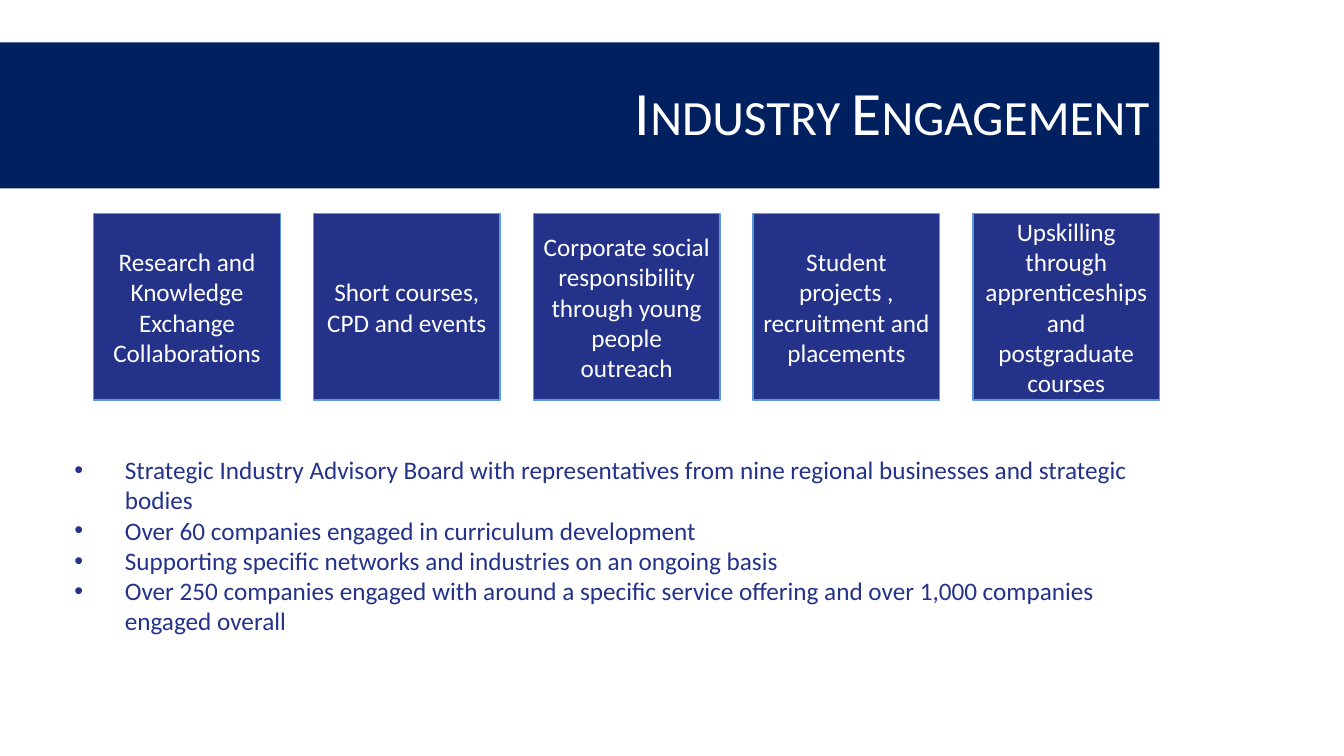
from lxml.etree import SubElement
from pptx import Presentation
from pptx.dml.color import RGBColor
from pptx.enum.shapes import MSO_SHAPE
from pptx.enum.text import MSO_ANCHOR, PP_ALIGN
from pptx.oxml.ns import qn
from pptx.util import Inches, Pt

# Content
TITLE = "Industry Engagement"
ACTIVITIES = [
    "Research and Knowledge Exchange Collaborations",
    "Short courses, CPD and events",
    "Corporate social responsibility through young people outreach",
    "Student projects , recruitment and placements",
    "Upskilling through apprenticeships and postgraduate courses",
]
ACHIEVEMENTS = [
    "Strategic Industry Advisory Board with representatives from nine regional businesses and strategic bodies",
    "Over 60 companies engaged in curriculum development",
    "Supporting specific networks and industries on an ongoing basis",
    "Over 250 companies engaged with around a specific service offering and over 1,000 companies engaged overall",
]

# Theme
THEME = {
    "banner": RGBColor(0x00, 0x20, 0x60),
    "tile": RGBColor(0x24, 0x32, 0x89),
    "outline": RGBColor(0x5B, 0x9B, 0xD5),
    "light": RGBColor(0xFF, 0xFF, 0xFF),
    "title_font": {"name": "Calibri", "size": Pt(44)},
    "body_font": {"name": "Calibri", "size": Pt(18)},
}

# Layout, in inches
RIGHT_EDGE = 11.5
TILE_SIZE, TILE_LEFT, TILE_TOP = 1.85, 0.93, 2.12
TILE_STEP = (RIGHT_EDGE - TILE_SIZE - TILE_LEFT) / (len(ACTIVITIES) - 1)
LIST_LEFT, LIST_TOP, LIST_HEIGHT = 0.64, 4.46, 1.92
BULLET_INDENT = Inches(0.5)


def write(paragraph, text, font_format, color):
    run = paragraph.add_run()
    run.text = text
    for name, value in font_format.items():
        setattr(run.font, name, value)
    run.font.color.rgb = color
    return run


def add_block(slide, box, fill, text, font_format, alignment):
    shape = slide.shapes.add_shape(MSO_SHAPE.RECTANGLE, *map(Inches, box))
    shape.shadow.inherit = False
    shape.fill.solid()
    shape.fill.fore_color.rgb = fill
    shape.text_frame.word_wrap = True
    shape.text_frame.vertical_anchor = MSO_ANCHOR.MIDDLE
    paragraph = shape.text_frame.paragraphs[0]
    paragraph.alignment = alignment
    return shape, write(paragraph, text, font_format, THEME["light"])


def add_bullet(paragraph):
    properties = paragraph._p.get_or_add_pPr()
    properties.set("marL", str(BULLET_INDENT))
    properties.set("indent", str(-BULLET_INDENT))
    SubElement(properties, qn("a:buFont")).set("typeface", "Arial")
    SubElement(properties, qn("a:buChar")).set("char", "•")


def main():
    presentation = Presentation()
    presentation.slide_width = Inches(13.33)
    presentation.slide_height = Inches(7.5)
    slide = presentation.slides.add_slide(presentation.slide_layouts[6])

    # Title banner in small capitals
    banner, title = add_block(slide, (0, 0.42, RIGHT_EDGE, 1.45), THEME["banner"],
                              TITLE, THEME["title_font"], PP_ALIGN.RIGHT)
    banner.line.fill.background()
    banner.text_frame.paragraphs[0].line_spacing = 0.9
    title.font._element.set("cap", "small")

    # Achievements list
    box = (LIST_LEFT, LIST_TOP, RIGHT_EDGE - LIST_LEFT, LIST_HEIGHT)
    frame = slide.shapes.add_textbox(*map(Inches, box)).text_frame
    frame.word_wrap = True
    for index, text in enumerate(ACHIEVEMENTS):
        paragraph = frame.add_paragraph() if index else frame.paragraphs[0]
        add_bullet(paragraph)
        write(paragraph, text, THEME["body_font"], THEME["tile"])

    # Row of activity tiles
    for index, text in enumerate(ACTIVITIES):
        box = (TILE_LEFT + index * TILE_STEP, TILE_TOP, TILE_SIZE, TILE_SIZE)
        tile, _ = add_block(slide, box, THEME["tile"], text,
                            THEME["body_font"], PP_ALIGN.CENTER)
        tile.line.color.rgb = THEME["outline"]
        tile.line.width = Pt(1)

    presentation.save("out.pptx")


if __name__ == "__main__":
    main()
